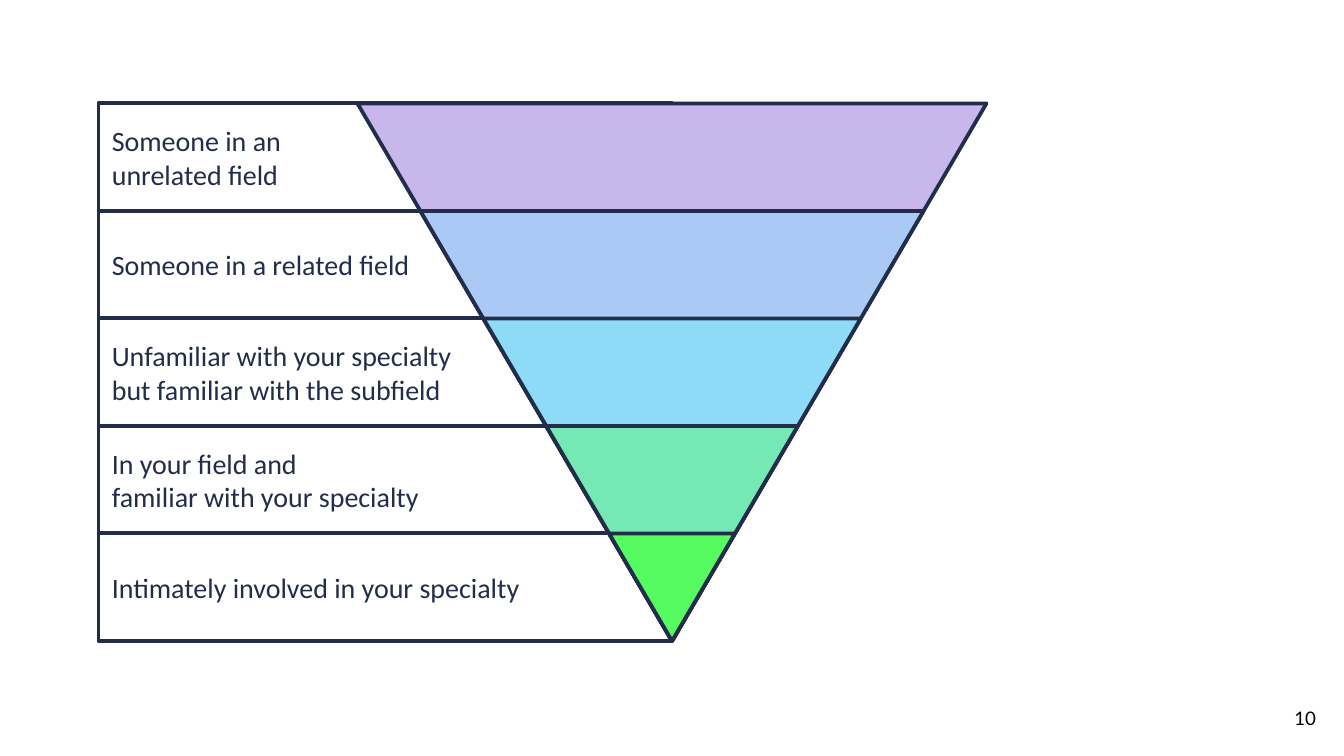
import pptx
import pptx.util
import pptx.dml.color
import pptx.enum.shapes
import pptx.enum.text

Pt = pptx.util.Pt
Shape = pptx.enum.shapes.MSO_SHAPE
Align = pptx.enum.text.PP_ALIGN
Anchor = pptx.enum.text.MSO_ANCHOR


def color(code):
    return pptx.dml.color.RGBColor.from_string(code)


class Deck:
    ink = "212D4A"
    line = 2

    def __init__(self, wide, high):
        self.file = pptx.Presentation()
        self.file.slide_width = Pt(wide)
        self.file.slide_height = Pt(high)
        self.slide = self.file.slides.add_slide(self.file.slide_layouts[6])

    def shape(self, kind, box, fill=None):
        item = self.slide.shapes.add_shape(kind, *map(Pt, box))
        item.shadow.inherit = False
        if fill:
            item.fill.solid()
            item.fill.fore_color.rgb = color(fill)
        else:
            item.fill.background()
        item.line.color.rgb = color(self.ink)
        item.line.width = Pt(self.line)
        return item

    def label(self, item, lines, font, size, ink, align):
        frame = item.text_frame
        frame.word_wrap = True
        frame.vertical_anchor = Anchor.MIDDLE
        for i, text in enumerate(lines):
            para = frame.add_paragraph() if i else frame.paragraphs[0]
            para.text = text
            para.alignment = align
            para.font.name = font
            para.font.size = Pt(size)
            para.font.color.rgb = color(ink)

    def row(self, box, lines):
        item = self.shape(Shape.RECTANGLE, box)
        self.label(item, lines, "Calibri", 15, self.ink, Align.LEFT)

    def cone(self, box, fill):
        self.shape(Shape.ISOSCELES_TRIANGLE, box, fill).rotation = 180

    def number(self, box, text):
        item = self.slide.shapes.add_textbox(*map(Pt, box))
        frame = item.text_frame
        frame.margin_left = frame.margin_right = Pt(7.2)
        frame.margin_top = frame.margin_bottom = Pt(7.2)
        self.label(item, [text], "Lato", 10, "000000", Align.RIGHT)


def main():
    levels = [
        ("C8B7EB", ["Someone in an", "unrelated field"]),
        ("ABC9F5", ["Someone in a related field"]),
        ("8DDBF6", ["Unfamiliar with your specialty",
                    "but familiar with the subfield"]),
        ("74E9B4", ["In your field and", "familiar with your specialty"]),
        ("56FB61", ["Intimately involved in your specialty"]),
    ]
    left, top, mid = 52.8, 55.4, 360
    high, step = 57.6, 67.4

    deck = Deck(720, 405)
    for i, (fill, lines) in reversed(list(enumerate(levels))):
        deck.row((left, top + i * high, mid - left, high), lines)
    for i, (fill, lines) in enumerate(levels):
        rest = len(levels) - i
        wide = rest * step
        deck.cone((mid - wide / 2, top + i * high, wide, rest * high), fill)
    deck.number((668.9, 369.4, 43.2, 31), "10")
    deck.file.save("out.pptx")


if __name__ == "__main__":
    main()
